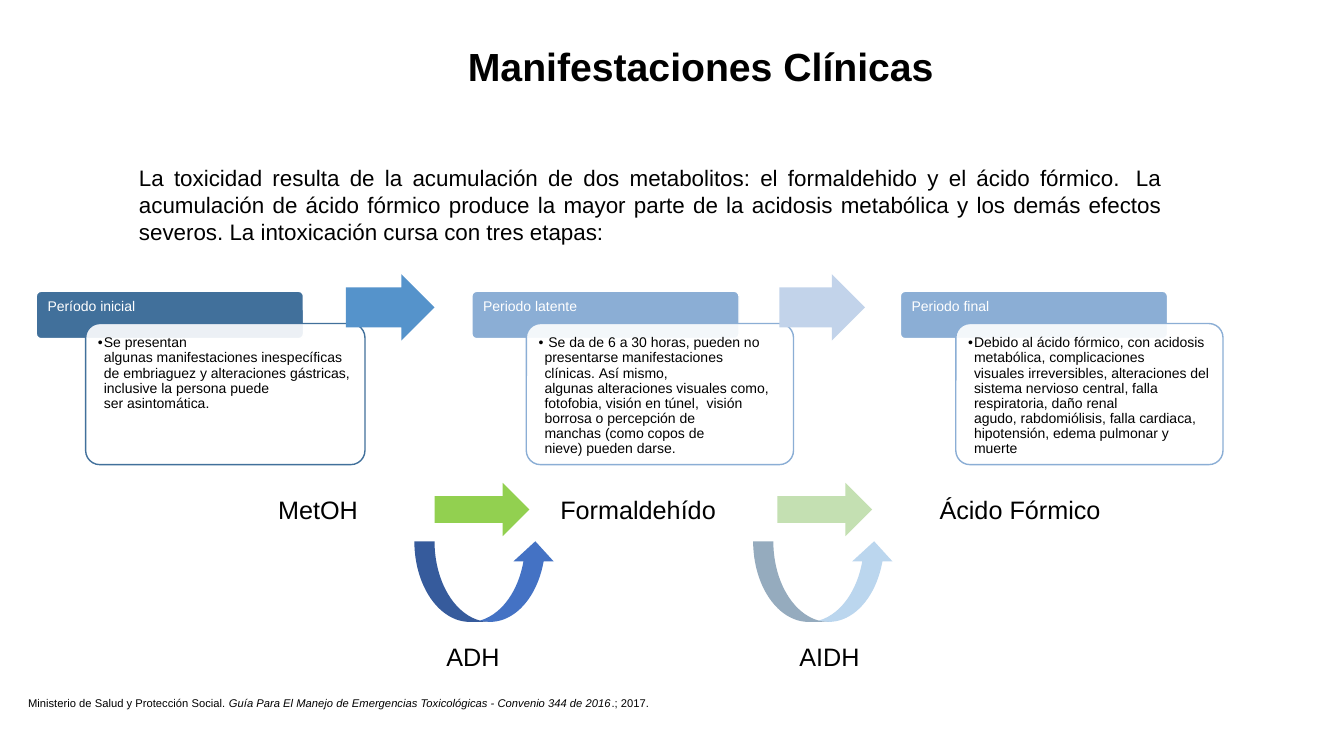
from dataclasses import dataclass

from lxml import etree
from pptx import Presentation
from pptx.dml.color import RGBColor
from pptx.enum.shapes import MSO_SHAPE
from pptx.enum.text import MSO_ANCHOR, PP_ALIGN
from pptx.oxml.ns import qn
from pptx.util import Inches, Pt

ROUNDED = MSO_SHAPE.ROUNDED_RECTANGLE
RIGHT_ARROW = MSO_SHAPE.RIGHT_ARROW
CURVED_ARROW = MSO_SHAPE.CURVED_UP_ARROW
TOP, MIDDLE = MSO_ANCHOR.TOP, MSO_ANCHOR.MIDDLE
LEFT, CENTER, JUSTIFY = PP_ALIGN.LEFT, PP_ALIGN.CENTER, PP_ALIGN.JUSTIFY
TIE, HARD_SPACE = "~", chr(160)


@dataclass(frozen=True)
class Theme:
    """Colours, font and type sizes of the slide."""
    font: str = "Arial"
    ink: str = "000000"
    paper: str = "FFFFFF"
    initial: str = "41709B"
    later: str = "8BAED5"
    first_step: str = "5593CB"
    second_step: str = "C2D3EA"
    first_reaction: str = "92D050"
    second_reaction: str = "C4E0B2"
    first_enzyme: str = "4472C4"
    second_enzyme: str = "BBD6EE"
    title: int = 28
    label: int = 18
    intro: int = 16
    card: int = 10
    source: int = 8


THEME = Theme()

INTRO = ("La toxicidad resulta de la acumulación de dos metabolitos: el formaldehido y el ácido "
         "fórmico.~ La acumulación de ácido fórmico produce la mayor parte de la acidosis "
         "metabólica y los demás efectos severos. La intoxicación cursa con tres etapas:")
STAGES = [
    (0.36, 0.49, 2.77, THEME.initial, "Período inicial",
     "Se presentan algunas~manifestaciones~inespecíficas de~embriaguez y "
     "alteraciones~gástricas, inclusive la~persona puede ser~asintomática."),
    (4.68, 0.54, 2.65, THEME.later, "Periodo latente",
     "~Se da de 6 a 30 horas,~pueden no presentarse~manifestaciones clínicas.~Así mismo, "
     "algunas~alteraciones visuales como, fotofobia, visión en túnel, ~visión borrosa "
     "o~percepción de manchas~(como copos de nieve)~pueden darse."),
    (8.93, 0.55, 2.65, THEME.later, "Periodo final",
     "Debido al ácido fórmico,~con acidosis metabólica,~complicaciones "
     "visuales~irreversibles, alteraciones~del sistema nervioso~central, falla "
     "respiratoria,~daño renal agudo,~rabdomiólisis, falla~cardiaca, "
     "hipotensión,~edema pulmonar y muerte"),
]
STEPS = [(3.43, 0.88, THEME.first_step), (7.73, 0.85, THEME.second_step)]
METABOLITES = [(2.66, "MetOH"), (5.46, "Formaldehído"), (9.22, "Ácido Fórmico")]
REACTIONS = [
    (4.31, THEME.first_reaction, 4.11, THEME.first_enzyme, 4.33, "ADH"),
    (7.71, THEME.second_reaction, 7.47, THEME.second_enzyme, 7.83, "AIDH"),
]
SOURCE = [
    ("Ministerio de Salud y Protección Social. ", False),
    ("Guía Para El Manejo de Emergencias Toxicológicas - Convenio 344 de 2016", True),
    (".; 2017.", False),
]


def inches(box):
    """Turn a box given in inches into lengths."""
    return [Inches(side) for side in box]


def write(frame, runs, size, color=THEME.ink, align=LEFT, anchor=TOP,
          insets=(0.1, 0.05, 0.1, 0.05), spacing=None, bold=False):
    """Fill a text frame with one paragraph of (text, italic) runs, ties as hard spaces."""
    frame.word_wrap = True
    frame.vertical_anchor = anchor
    frame.margin_left, frame.margin_top, frame.margin_right, frame.margin_bottom = inches(insets)
    paragraph = frame.paragraphs[0]
    paragraph.alignment = align
    if spacing:
        paragraph.line_spacing = spacing
    for text, italic in runs:
        run = paragraph.add_run()
        run.text = text.replace(TIE, HARD_SPACE)
        run.font.name = THEME.font
        run.font.size = Pt(size)
        run.font.bold = bold
        run.font.italic = italic
        run.font.color.rgb = RGBColor.from_string(color)
    return paragraph


def add_label(slide, box, runs, size, align=LEFT):
    """Place a plain text box."""
    label = slide.shapes.add_textbox(*inches(box))
    write(label.text_frame, runs, size, align=align)


def add_block(slide, kind, box, fill, adjustments, line=None):
    """Place a filled preset shape, outlined when a line colour is given."""
    block = slide.shapes.add_shape(kind, *inches(box))
    block.shadow.inherit = False
    block.fill.solid()
    block.fill.fore_color.rgb = RGBColor.from_string(fill)
    for index, value in enumerate(adjustments):
        block.adjustments[index] = value
    if line:
        block.line.color.rgb = RGBColor.from_string(line)
        block.line.width = Pt(1)
    else:
        block.line.fill.background()
    return block


def add_bullet(paragraph):
    """Give a paragraph a hanging round bullet."""
    properties = paragraph._p.get_or_add_pPr()
    properties.set("marL", str(Inches(0.06)))
    properties.set("indent", str(Inches(-0.07)))
    color = etree.SubElement(properties, qn("a:buClr"))
    etree.SubElement(color, qn("a:srgbClr"), val=THEME.ink)
    etree.SubElement(properties, qn("a:buFont"), typeface=THEME.font)
    etree.SubElement(properties, qn("a:buChar"), char="•")


def add_stage(slide, left, top, shift, width, color, heading, symptoms):
    """Draw one stage: a heading tab with a translucent card over it."""
    tab = add_block(slide, ROUNDED, (left, top, 2.65, 0.47), color, [0.1], THEME.paper)
    write(tab.text_frame, [(heading, False)], THEME.card, THEME.paper,
          insets=(0.1, 0.07, 0.08, 0.04), spacing=0.9)
    card = add_block(slide, ROUNDED, (left + shift, top + 0.32, width, 1.4),
                     THEME.paper, [0.1], color)
    solid = card.fill._xPr.find(qn("a:solidFill"))
    etree.SubElement(solid[0], qn("a:alpha"), val="90000")
    paragraph = write(card.text_frame, [(symptoms, False)], THEME.card,
                      insets=(0.08,) * 4, spacing=0.9)
    add_bullet(paragraph)


def add_stages(slide, top):
    """Draw the three stages and the arrows between them."""
    for left, *details in STAGES:
        add_stage(slide, left, top + 0.17, *details)
    for left, width, color in STEPS:
        add_block(slide, RIGHT_ARROW, (left, top, width, 0.66), color, [0.6, 0.5])


def add_pathway(slide, top):
    """Draw the metabolic pathway with its enzymes."""
    for left, metabolite in METABOLITES:
        add_label(slide, (left, top + 0.06, 2.4, 0.4), [(metabolite, False)], THEME.label)
    for arrow, arrow_color, curve, curve_color, name, enzyme in REACTIONS:
        add_block(slide, RIGHT_ARROW, (arrow, top, 0.94, 0.53), arrow_color, [0.5, 0.5])
        add_block(slide, CURVED_ARROW, (curve, top + 0.58, 1.4, 0.8), curve_color,
                  [0.25, 0.5, 0.25])
        add_label(slide, (name, top + 1.52, 3.16, 0.4), [(enzyme, False)], THEME.label)


def add_title(slide, box):
    """Move and fill the title placeholder."""
    title = slide.shapes.title
    title.left, title.top, title.width, title.height = inches(box)
    write(title.text_frame, [("Manifestaciones Clínicas", False)], THEME.title,
          align=CENTER, anchor=MIDDLE, spacing=0.9, bold=True)


def main():
    """Build and save the slide."""
    deck = Presentation()
    deck.slide_width, deck.slide_height = Inches(13.33), Inches(7.5)
    slide = deck.slides.add_slide(deck.slide_layouts[5])
    add_title(slide, (1.2, 0.24, 11.5, 0.89))
    add_label(slide, (1.28, 1.58, 10.34, 0.91), [(INTRO, False)], THEME.intro, JUSTIFY)
    add_stages(slide, 2.72)
    add_pathway(slide, 4.79)
    add_label(slide, (0.18, 6.86, 6.43, 0.24), SOURCE, THEME.source)
    deck.save("out.pptx")


if __name__ == "__main__":
    main()
